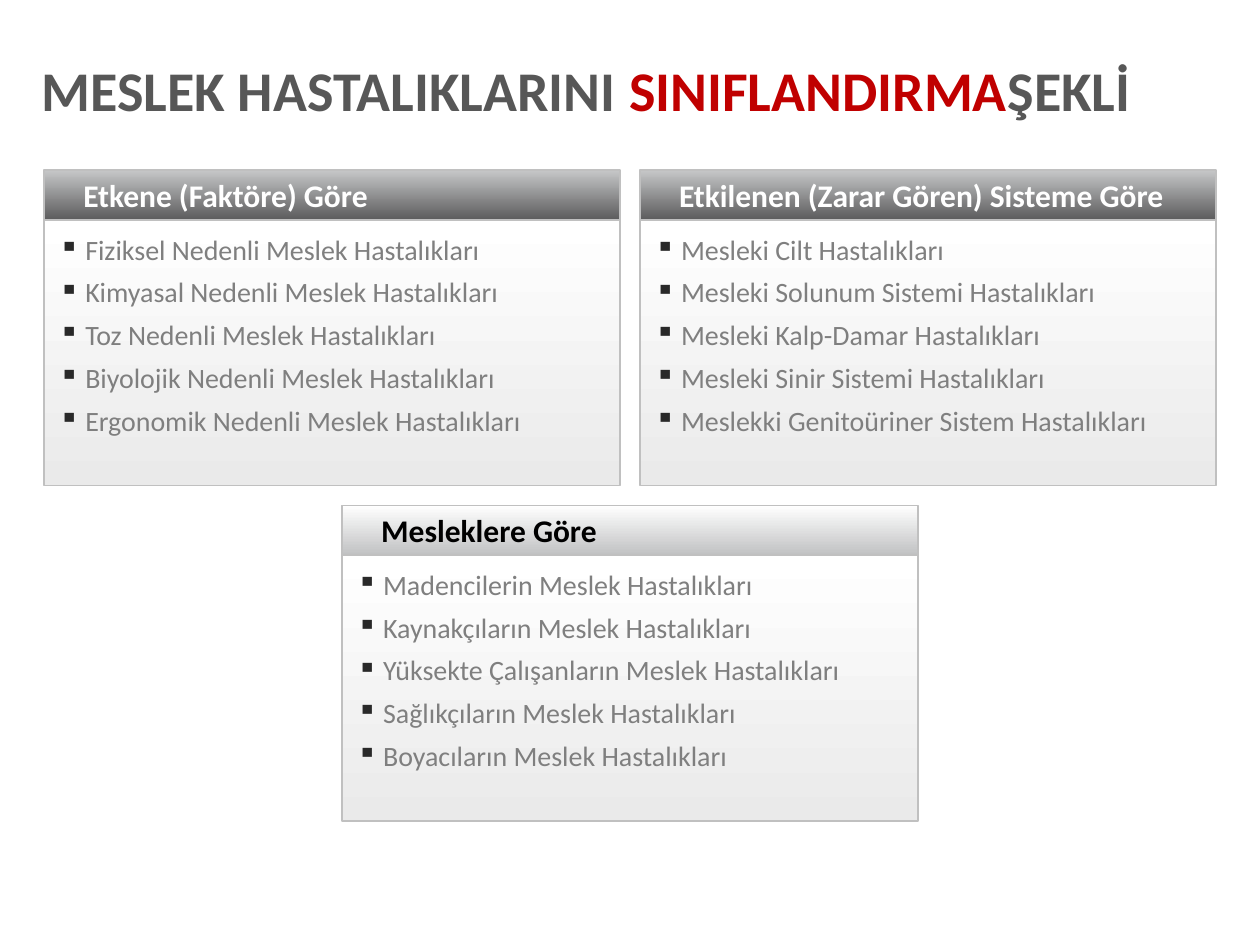
"""Builds a slide that groups occupational diseases into three titled panels."""
from dataclasses import dataclass

from lxml.etree import SubElement
from pptx import Presentation
from pptx.dml.color import RGBColor as RGB
from pptx.enum.shapes import MSO_SHAPE as SHAPE
from pptx.enum.text import MSO_ANCHOR as ANCHOR, PP_ALIGN as ALIGN
from pptx.oxml.ns import qn
from pptx.util import Cm, Pt


@dataclass(frozen=True)
class Theme:
    font: str = "Calibri"
    title_size: int = 32
    head_size: int = 18
    body_size: int = 16
    title: str = "575757"
    accent: str = "C00000"
    body: str = "7F7F7F"
    bullet: str = "292929"
    border: str = "C0C0C0"
    light_text: str = "FFFFFF"
    dark_text: str = "000000"
    dark_grad: tuple = ("C6C7C8", "5C5C5D")
    light_grad: tuple = ("FFFFFF", "C1C2C3")
    body_grad: tuple = ("FFFFFF", "EAEAEA")


class SlideBuilder:
    def __init__(self, s, theme):
        self.s, self.theme = s, theme

    def apply(self, obj, **values):
        for name, value in values.items():
            setattr(obj, name, value)

    def frame(self, sp, insets, anchor=ANCHOR.TOP):
        tf = sp.text_frame
        sides = ("margin_left", "margin_top", "margin_right", "margin_bottom")
        self.apply(tf, word_wrap=True, vertical_anchor=anchor,
                   **{k: Cm(v) for k, v in zip(sides, insets)})
        return tf

    def run(self, p, text, size, color, bold=False):
        r = p.add_run()
        r.text = text
        self.apply(r.font, name=self.theme.font, size=Pt(size), bold=bold)
        r.font.color.rgb = RGB.from_string(color)

    def bullet(self, p):
        pPr = p._p.get_or_add_pPr()
        pPr.set("marL", str(Cm(0.53)))
        pPr.set("indent", str(-Cm(0.53)))
        clr = SubElement(pPr, qn("a:buClr"))
        SubElement(clr, qn("a:srgbClr"), val=self.theme.bullet)
        SubElement(pPr, qn("a:buChar"), char="▪")

    def title(self, box, parts):
        sp = self.s.shapes.add_textbox(*map(Cm, box))
        p = self.frame(sp, (0, 0.13, 0, 0.13)).paragraphs[0]
        p.line_spacing = 0.9
        for text, color in parts:
            self.run(p, text, self.theme.title_size, color, True)

    def rect(self, shapes, box, grad):
        sp = shapes.add_shape(SHAPE.RECTANGLE, *map(Cm, box))
        sp.shadow.inherit = False
        sp.fill.gradient()
        sp.fill.gradient_angle = 270
        for stop, color in zip(sp.fill.gradient_stops, grad):
            stop.color.rgb = RGB.from_string(color)
        sp.line.color.rgb = RGB.from_string(self.theme.border)
        sp.line.width = Pt(1)
        return sp

    def panel(self, x, y, w, head_h, body_h, head, items, grad, color):
        t = self.theme
        shapes = self.s.shapes.add_group_shape().shapes
        sp = self.rect(shapes, (x, y, w, head_h), grad)
        p = self.frame(sp, (0.79, 0, 0, 0), ANCHOR.MIDDLE).paragraphs[0]
        p.alignment = ALIGN.LEFT
        self.run(p, head, t.head_size, color, True)

        sp = self.rect(shapes, (x, y + head_h, w, body_h), t.body_grad)
        tf = self.frame(sp, (0.3, 0.3, 0.41, 0.2))
        for i, item in enumerate(items):
            p = tf.add_paragraph() if i else tf.paragraphs[0]
            self.bullet(p)
            self.apply(p, alignment=ALIGN.LEFT, line_spacing=0.95, space_after=Pt(6.2))
            self.run(p, item, t.body_size, t.body)


def main():
    prs = Presentation()
    prs.slide_width, prs.slide_height = Cm(25.4), Cm(19.05)
    t = Theme()
    b = SlideBuilder(prs.slides.add_slide(prs.slide_layouts[6]), t)
    b.title((0.84, 1.14, 23.67, 1.8), [
        ("MESLEK HASTALIKLARINI ", t.title),
        ("SINIFLANDIRMA", t.accent),
        ("ŞEKLİ", t.title),
    ])

    width, head_h, body_h = 11.61, 1, 5.36
    left, top, gap = 0.89, 3.43, 0.4
    right = left + width + gap
    lower = top + head_h + body_h + gap
    dark, light = (t.dark_grad, t.light_text), (t.light_grad, t.dark_text)
    panels = [
        (left, top, dark, "Etkene (Faktöre) Göre", [
            f"{cause} Nedenli Meslek Hastalıkları"
            for cause in ("Fiziksel", "Kimyasal", "Toz", "Biyolojik", "Ergonomik")]),
        (right, top, dark, "Etkilenen (Zarar Gören) Sisteme Göre", [
            "Mesleki Cilt Hastalıkları",
            "Mesleki Solunum Sistemi Hastalıkları",
            "Mesleki Kalp-Damar Hastalıkları",
            "Mesleki Sinir Sistemi Hastalıkları",
            "Meslekki Genitoüriner Sistem Hastalıkları"]),
        ((left + right) / 2, lower, light, "Mesleklere Göre", [
            f"{workers} Meslek Hastalıkları"
            for workers in ("Madencilerin", "Kaynakçıların", "Yüksekte Çalışanların",
                            "Sağlıkçıların", "Boyacıların")]),
    ]
    for x, y, look, head, items in panels:
        b.panel(x, y, width, head_h, body_h, head, items, *look)
    prs.save("out.pptx")


if __name__ == "__main__":
    main()
